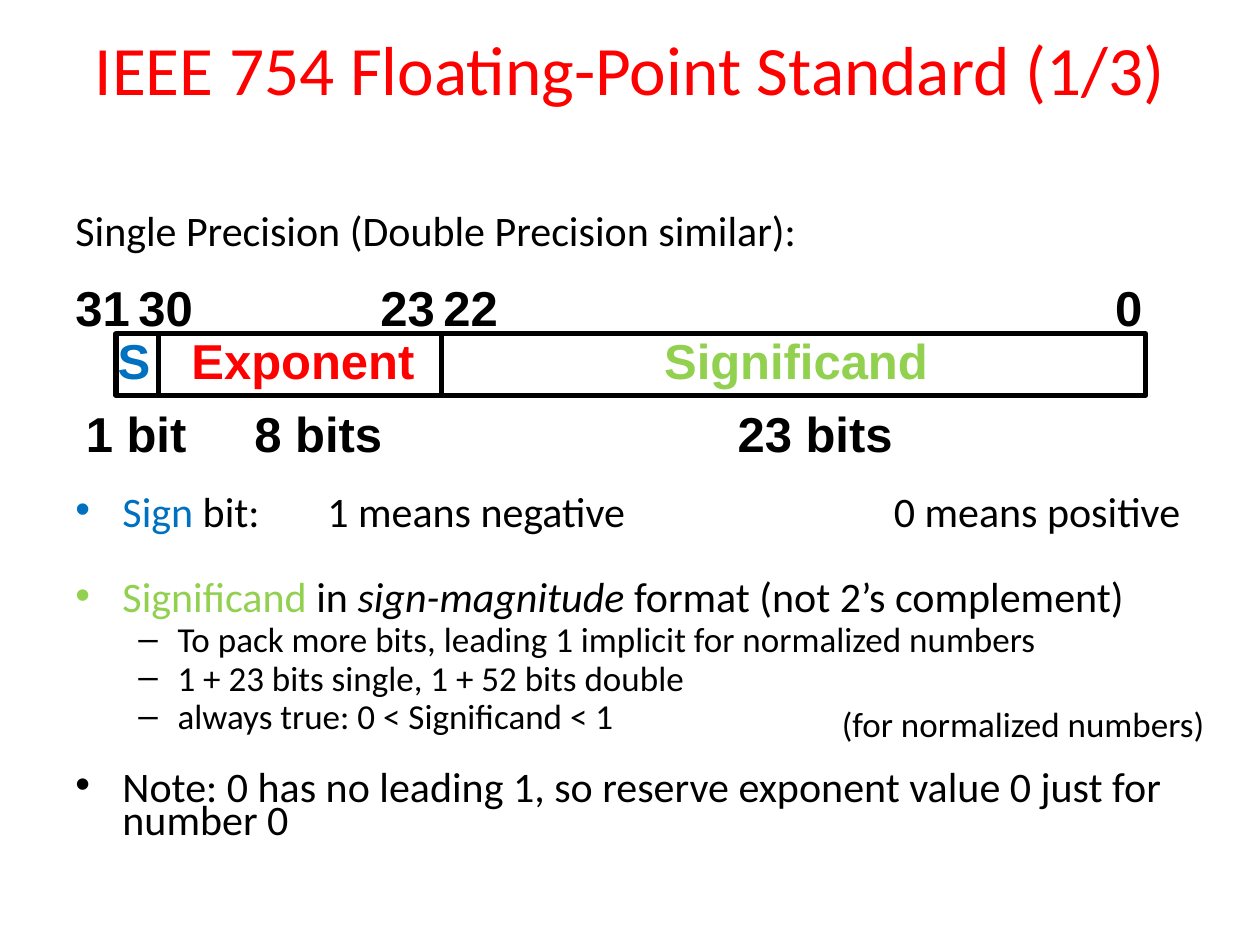
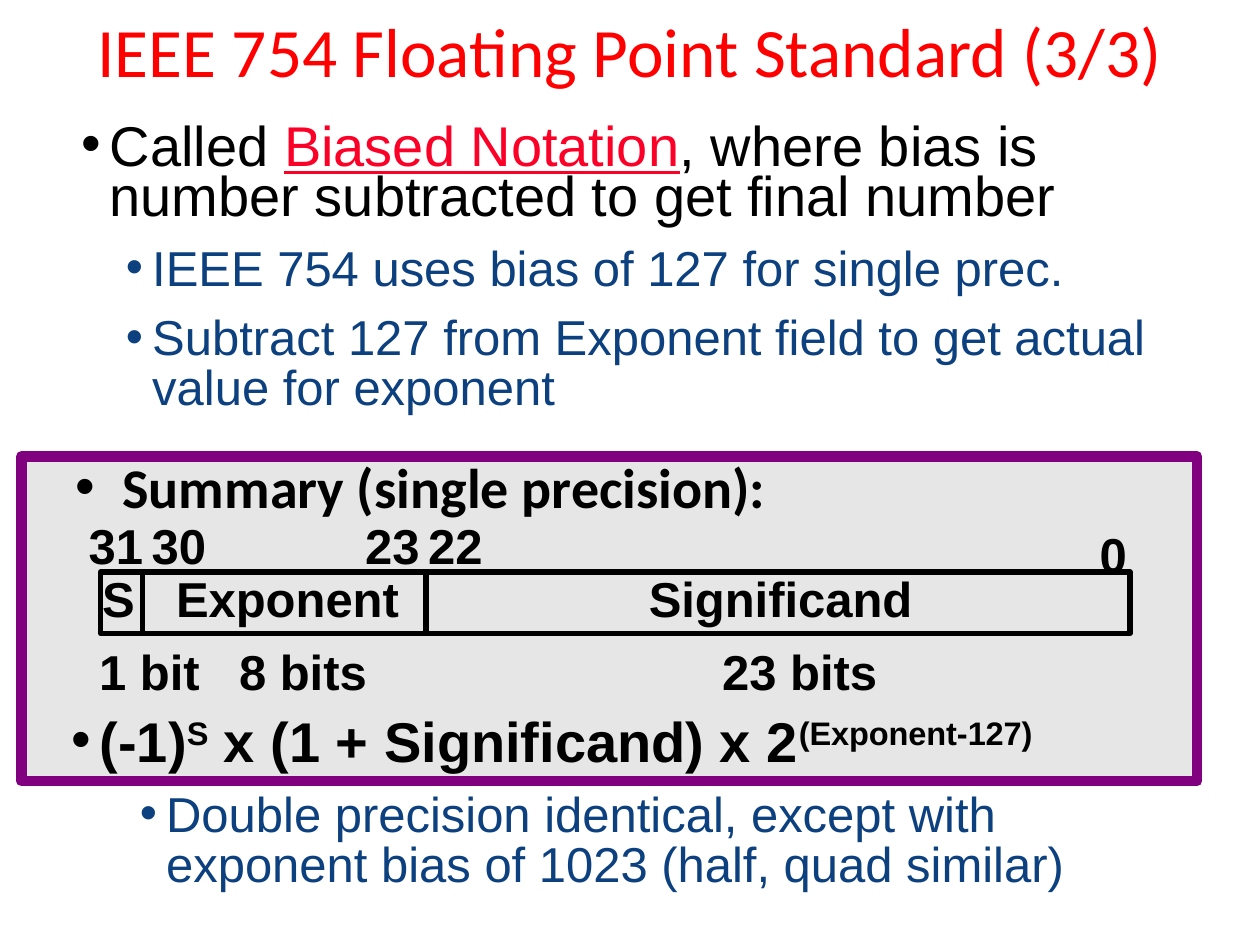
from lxml.etree import SubElement
from pptx import Presentation
from pptx.dml.color import RGBColor as Rgb
from pptx.enum.shapes import MSO_CONNECTOR as Connector, MSO_SHAPE as Shape
from pptx.enum.text import MSO_ANCHOR as Anchor, PP_ALIGN as Align
from pptx.oxml.ns import qn
from pptx.util import Cm, Pt

COLORS = {
    "black": "000000", "red": "FF0000", "blue": "0070C0", "green": "92D050",
    "crimson": "FC0128", "navy": "0D407F", "panel": "E6E6E6", "purple": "800080",
}
RGB = {name: Rgb.from_string(value) for name, value in COLORS.items()}

# margin and hang are in cm, before is in points
STYLES = {
    "title": dict(font="Calibri", size=39.6, color="red", align=Align.CENTER),
    "label": dict(font="Arial", size=28, bold=True),
    "plain": dict(font="Calibri", size=24, line=0.65),
    "point": dict(font="Calibri", size=24, margin=0.95, hang=0.95, bullet="•", line=0.65),
    "airy point": dict(font="Calibri", size=24, margin=0.95, hang=0.95, bullet="•",
                       line=1.55, before=4.8),
    "dash": dict(font="Calibri", size=20, margin=2.06, hang=0.79, bullet="–",
                 line=0.75, before=4),
    "note": dict(font="Calibri", size=24, margin=0.95, hang=0.95, bullet="•",
                 line=0.65, before=23),
    "remark": dict(font="Calibri", size=20, line=0.75),
    "summary": dict(font="Calibri", size=32, bold=True, margin=0.95, hang=0.95, bullet="•"),
    "big point": dict(font="Arial", size=32, margin=0.56, hang=0.56, bullet="•", line=0.75),
    "formula": dict(font="Arial", size=32, bold=True, margin=0.56, hang=0.56, bullet="•",
                    line=0.75),
    "detail": dict(font="Arial", size=28, color="navy", margin=1.42, hang=0.53, bullet="•",
                   line=0.85, before=11.2),
    "deep detail": dict(font="Arial", size=28, color="navy", margin=1.9, hang=0.53,
                        bullet="•", line=0.85, before=11.2),
}


def add_text(shapes, box, paragraphs, wrap=True, inset=(0.25, 0.13), anchor=Anchor.TOP):
    """Each paragraph is (style, run, ...); a run is a string or (string, changes)."""
    frame = shapes.add_textbox(*map(Cm, box)).text_frame
    frame.word_wrap = wrap
    frame.vertical_anchor = anchor
    frame.margin_left = frame.margin_right = Cm(inset[0])
    frame.margin_top = frame.margin_bottom = Cm(inset[1])
    for number, (style_name, *runs) in enumerate(paragraphs):
        style = STYLES[style_name]
        paragraph = frame.add_paragraph() if number else frame.paragraphs[0]
        paragraph.alignment = style.get("align", Align.LEFT)
        paragraph.line_spacing = style.get("line", 1.0)
        paragraph.space_before = Pt(style.get("before", 0))
        if "bullet" in style:
            properties = paragraph._p.get_or_add_pPr()
            properties.set("marL", str(Cm(style["margin"])))
            properties.set("indent", str(-Cm(style["hang"])))
            SubElement(properties, qn("a:buFont"), typeface="Arial")
            SubElement(properties, qn("a:buChar"), char=style["bullet"])
        paragraph.font.name = style["font"]
        paragraph.font.size = Pt(style["size"])
        paragraph.font.bold = style.get("bold", False)
        for part in runs:
            words, changes = (part, {}) if isinstance(part, str) else part
            run = paragraph.add_run()
            run.text = words
            run.font.color.rgb = RGB[changes.get("color", style.get("color", "black"))]
            if "italic" in changes:
                run.font.italic = True
            if "underline" in changes:
                run.font.underline = True
            if "raised" in changes:
                run.font._element.set("baseline", "30000")


def add_word_layout(slide, left, top, field_colors, nudge=0, zero_drop=0):
    """Draw the 32-bit word; nudge moves the labels at its left end."""
    group = slide.shapes.add_group_shape().shapes
    word = group.add_shape(Shape.RECTANGLE, Cm(left), Cm(top), Cm(20.75), Cm(1.24))
    word.shadow.inherit = False
    word.fill.background()
    word.line.color.rgb = RGB["black"]
    word.line.width = Pt(3)
    for offset in (0.85, 6.56):
        x = Cm(left + offset)
        divider = group.add_connector(Connector.STRAIGHT, x, Cm(top), x, Cm(top + 1.27))
        divider.line.color.rgb = RGB["black"]
        divider.line.width = Pt(3)
        SubElement(divider._element.spPr, qn("a:effectLst"))

    sign, exponent, significand = field_colors
    above, inside, below = -1.27, -0.2, 1.27
    labels = [
        ("31", -1.07 + nudge, above, 1.6, "black"),
        ("30", 0.2 + nudge, above, 1.6, "black"),
        ("23", 5.08, above, 1.6, "black"),
        ("22", 6.35, above, 1.6, "black"),
        ("0", 19.89, above + zero_drop, 1.07, "black"),
        ("S", -0.22, inside, 1.17, sign),
        ("Exponent", 1.27, inside, 5.03, exponent),
        ("Significand", 10.8, inside, 5.87, significand),
        ("1 bit", -0.86 + nudge, below, 2.54, "black"),
        ("8 bits", 2.54, below, 3.1, "black"),
        ("23 bits", 12.28, below, 3.63, "black"),
    ]
    for words, dx, dy, width, color in labels:
        add_text(group, (left + dx, top + dy, width, 1.45),
                 [("label", (words, {"color": color}))], wrap=False)


deck = Presentation()
deck.slide_width, deck.slide_height = Cm(25.4), Cm(19.05)
blank = deck.slide_layouts[6]

# Slide 1: fields of a single precision number
fields = deck.slides.add_slide(blank)
add_text(fields.shapes, (1.27, 0.41, 22.86, 1.9),
         [("title", "IEEE 754 Floating-Point Standard (1/3)")], anchor=Anchor.MIDDLE)
add_text(fields.shapes, (1.27, 4.32, 22.86, 1),
         [("plain", "Single Precision (Double Precision similar):")])
add_text(fields.shapes, (1.27, 9.98, 23.7, 7.5), [
    ("point", ("Sign ", {"color": "blue"}), "bit:"),
    ("airy point", ("Significand ", {"color": "green"}), "in ",
     ("sign-magnitude ", {"italic": True}), "format (not 2’s complement)"),
    ("dash", "To pack more bits, leading 1 implicit for normalized numbers"),
    ("dash", "1 + 23 bits single, 1 + 52 bits double"),
    ("dash", "always true: 0 < Significand < 1"),
    ("note", "Note: 0 has no leading 1, so reserve exponent value 0 just for number 0"),
])
for style_name, words, x, y, width in [
    ("plain", "1 means negative", 6.35, 9.98, 7),
    ("plain", "0 means positive", 17.77, 9.98, 7),
    ("remark", "(for normalized numbers)", 16.72, 14.22, 8.4),
]:
    add_text(fields.shapes, (x, y, width, 0.9), [(style_name, words)])
add_word_layout(fields, 2.34, 6.73, ("blue", "red", "green"))

# Slide 2: biased notation and summary
bias = deck.slides.add_slide(blank)
panel = bias.shapes.add_shape(Shape.RECTANGLE, Cm(0.43), Cm(9.2), Cm(23.7), Cm(6.55))
panel.shadow.inherit = False
panel.fill.solid()
panel.fill.fore_color.rgb = RGB["panel"]
panel.line.color.rgb = RGB["purple"]
panel.line.width = Pt(6)
add_text(bias.shapes, (1.27, 0.08, 22.86, 1.85),
         [("title", "IEEE 754 Floating Point Standard (3/3)")], anchor=Anchor.MIDDLE)
add_text(bias.shapes, (1.27, 8.99, 22.86, 1.6), [("summary", "Summary (single precision):")])
add_text(bias.shapes, (1.47, 2.46, 22.86, 6.2), [
    ("big point", "Called ", ("Biased Notation", {"color": "crimson", "underline": True}),
     ", where bias is number subtracted to get final number"),
    ("detail", "IEEE 754 uses bias of 127 for single prec."),
    ("detail", "Subtract 127 from Exponent field to get actual value for exponent"),
], inset=(0.18, 0.08))
add_word_layout(bias, 2.03, 11.53, ("black",) * 3, nudge=0.58, zero_drop=0.18)
add_text(bias.shapes, (1.27, 14.48, 22.02, 3.66), [
    ("formula", "(-1)", ("S", {"raised": True}), " x (1 + Significand) x 2",
     ("(Exponent-127)", {"raised": True})),
    ("deep detail",
     "Double precision identical, except with exponent bias of 1023 (half, quad similar)"),
], inset=(0.18, 0.08))

deck.save("out.pptx")
